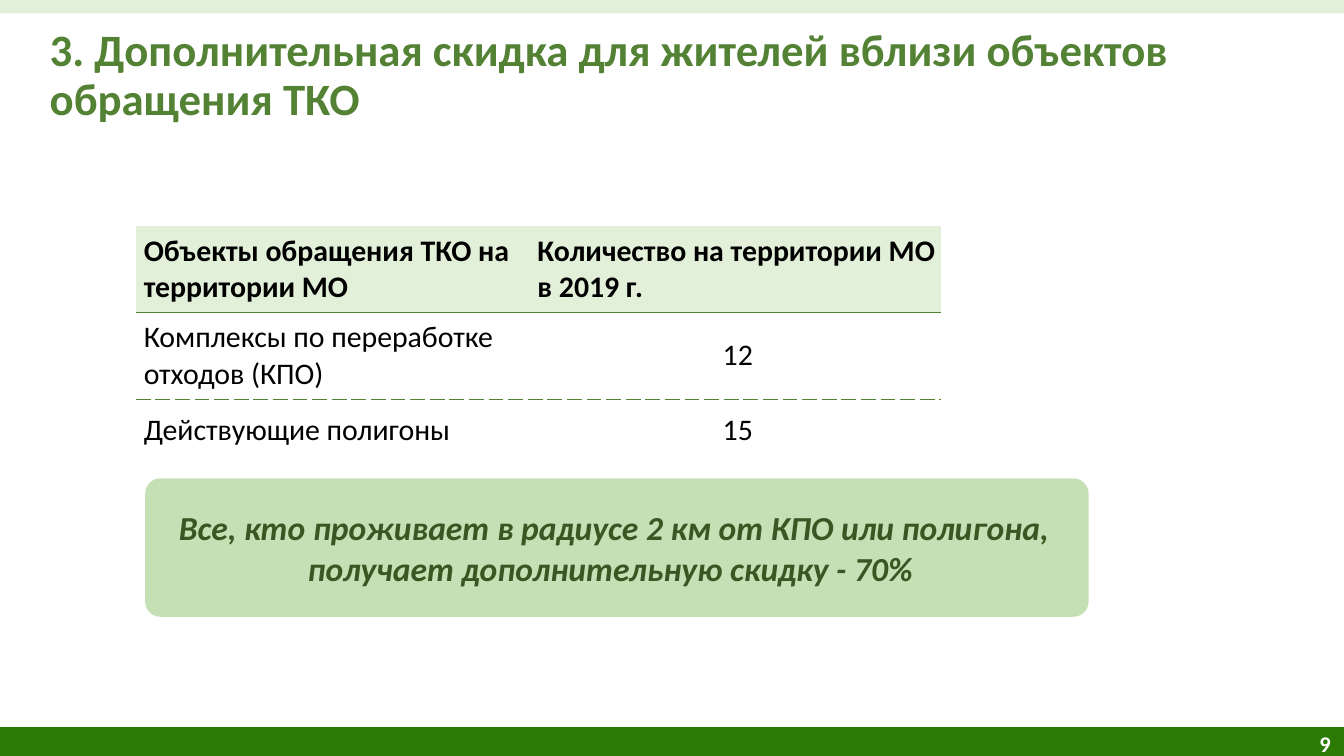
from lxml import etree
from pptx import Presentation
from pptx.dml.color import RGBColor
from pptx.enum.shapes import MSO_SHAPE
from pptx.enum.text import MSO_ANCHOR, PP_ALIGN
from pptx.oxml.ns import qn
from pptx.util import Inches, Pt

RECTANGLE = MSO_SHAPE.RECTANGLE
ROUNDED = MSO_SHAPE.ROUNDED_RECTANGLE
TOP, MIDDLE = MSO_ANCHOR.TOP, MSO_ANCHOR.MIDDLE
LEFT, CENTER, RIGHT = PP_ALIGN.LEFT, PP_ALIGN.CENTER, PP_ALIGN.RIGHT

GRID = 0.1
COLUMNS, ROWS = 100, 56.25
COLORS = {
    "footer": "2A7A03",
    "pale": "E2F0D9",
    "callout": "C5E0B4",
    "heading": "548235",
    "callout_text": "385723",
    "body": "000000",
    "white": "FFFFFF",
}
TABLE_COLUMNS = (29.7, 30.2)
TABLE_ROWS = (6.45, 6.45, 4.6)
TABLE_TEXT = (
    ("Объекты обращения ТКО на территории МО", "Количество на территории МО в 2019 г."),
    ("Комплексы по переработке отходов (КПО)", "12"),
    ("Действующие полигоны", "15"),
)
HEADER_RULE = (0.75, "solid")
ROW_RULE = (0.5, "dash")


def units(value):
    return Inches(value * GRID)


def box(*cells):
    return [units(value) for value in cells]


def color(name):
    return RGBColor.from_string(COLORS[name])


def set_attributes(target, values):
    for name, value in values.items():
        setattr(target, name, value)


def set_margins(target, insets):
    sides = ("margin_left", "margin_top", "margin_right", "margin_bottom")
    set_attributes(target, dict(zip(sides, box(*insets))))


def write_text(frame, text, color_name, font, paragraph_format):
    frame.word_wrap = True
    paragraph = frame.paragraphs[0]
    set_attributes(paragraph, paragraph_format)
    run = paragraph.add_run()
    run.text = text
    set_attributes(run.font, {"name": "Calibri", **font})
    run.font.color.rgb = color(color_name)


def add_panel(slide, kind, cells, fill):
    shape = slide.shapes.add_shape(kind, *box(*cells))
    shape.shadow.inherit = False
    shape.fill.solid()
    shape.fill.fore_color.rgb = color(fill)
    shape.line.fill.background()
    return shape


def add_label(slide, cells, insets, anchor, text, color_name, font, paragraph_format):
    frame = slide.shapes.add_textbox(*box(*cells)).text_frame
    set_margins(frame, insets)
    frame.vertical_anchor = anchor
    write_text(frame, text, color_name, font, paragraph_format)


def set_borders(cell, rules):
    properties = cell._tc.get_or_add_tcPr()
    for index, side in enumerate(("lnL", "lnR", "lnT", "lnB")):
        line = etree.Element(qn(f"a:{side}"))
        properties.insert(index, line)
        if side not in rules:
            etree.SubElement(line, qn("a:noFill"))
            continue
        width, dash = rules[side]
        line.set("w", str(Pt(width)))
        fill = etree.SubElement(line, qn("a:solidFill"))
        etree.SubElement(fill, qn("a:srgbClr"), val=COLORS["heading"])
        etree.SubElement(line, qn("a:prstDash"), val=dash)


def fill_cell(cell, text, row, column):
    is_header = row == 0
    is_count = column == 1 and not is_header
    cell.vertical_anchor = MIDDLE
    if is_count:
        set_margins(cell, (1, 0.5, 1, 0.5))
    else:
        set_margins(cell, (0.2 if column else 0.6, 0.5, 0.2, 0.5))
    if is_header:
        cell.fill.solid()
        cell.fill.fore_color.rgb = color("pale")
    else:
        cell.fill.background()
    write_text(cell.text_frame, text, "body", {"size": Pt(16), "bold": is_header},
               {"alignment": CENTER if is_count else LEFT})
    rules = (None, HEADER_RULE, ROW_RULE, None)
    edges = {"lnT": rules[row], "lnB": rules[row + 1]}
    set_borders(cell, {side: rule for side, rule in edges.items() if rule})


def add_facility_table(slide, left, top):
    cells = (left, top, sum(TABLE_COLUMNS), sum(TABLE_ROWS))
    table = slide.shapes.add_table(
        len(TABLE_ROWS), len(TABLE_COLUMNS), *box(*cells)).table
    set_attributes(table, {"first_row": False, "horz_banding": False})
    for column, width in zip(table.columns, TABLE_COLUMNS):
        column.width = units(width)
    for row, height in zip(table.rows, TABLE_ROWS):
        row.height = units(height)
    for row, texts in enumerate(TABLE_TEXT):
        for column, text in enumerate(texts):
            fill_cell(table.cell(row, column), text, row, column)


def add_callout(slide, cells, text):
    shape = add_panel(slide, ROUNDED, cells, "callout")
    shape.adjustments[0] = 0.11
    frame = shape.text_frame
    set_margins(frame, (0, 0.5, 0.4, 0.5))
    frame.vertical_anchor = MIDDLE
    write_text(frame, text, "callout_text",
               {"size": Pt(18), "bold": True, "italic": True},
               {"alignment": CENTER, "space_before": Pt(4.9)})


def main():
    presentation = Presentation()
    presentation.slide_width = units(COLUMNS)
    presentation.slide_height = units(ROWS)
    slide = presentation.slides.add_slide(presentation.slide_layouts[6])

    add_panel(slide, RECTANGLE, (0, 54.1, COLUMNS, 2.5), "footer")
    add_label(slide, (74.7, 53.3, 25.3, 4), (1, 0.5, 1, 0.5), MIDDLE, "9", "white",
              {"size": Pt(12), "bold": True}, {"alignment": RIGHT})
    add_panel(slide, RECTANGLE, (0, -0.2, COLUMNS, 1.2), "pale")
    add_label(slide, (3.7, 2.1, 94.4, 7.3), (0, 0, 0, 0), TOP,
              "3. Дополнительная скидка для жителей вблизи объектов обращения ТКО",
              "heading", {"size": Pt(24), "bold": True},
              {"alignment": LEFT, "line_spacing": 0.9})
    add_facility_table(slide, 10.1, 16.8)
    add_callout(slide, (10.8, 35.6, 70.2, 10.3),
                "Все, кто проживает в радиусе 2 км от КПО или полигона, "
                "получает дополнительную скидку - 70% ")
    presentation.save("out.pptx")


if __name__ == "__main__":
    main()
